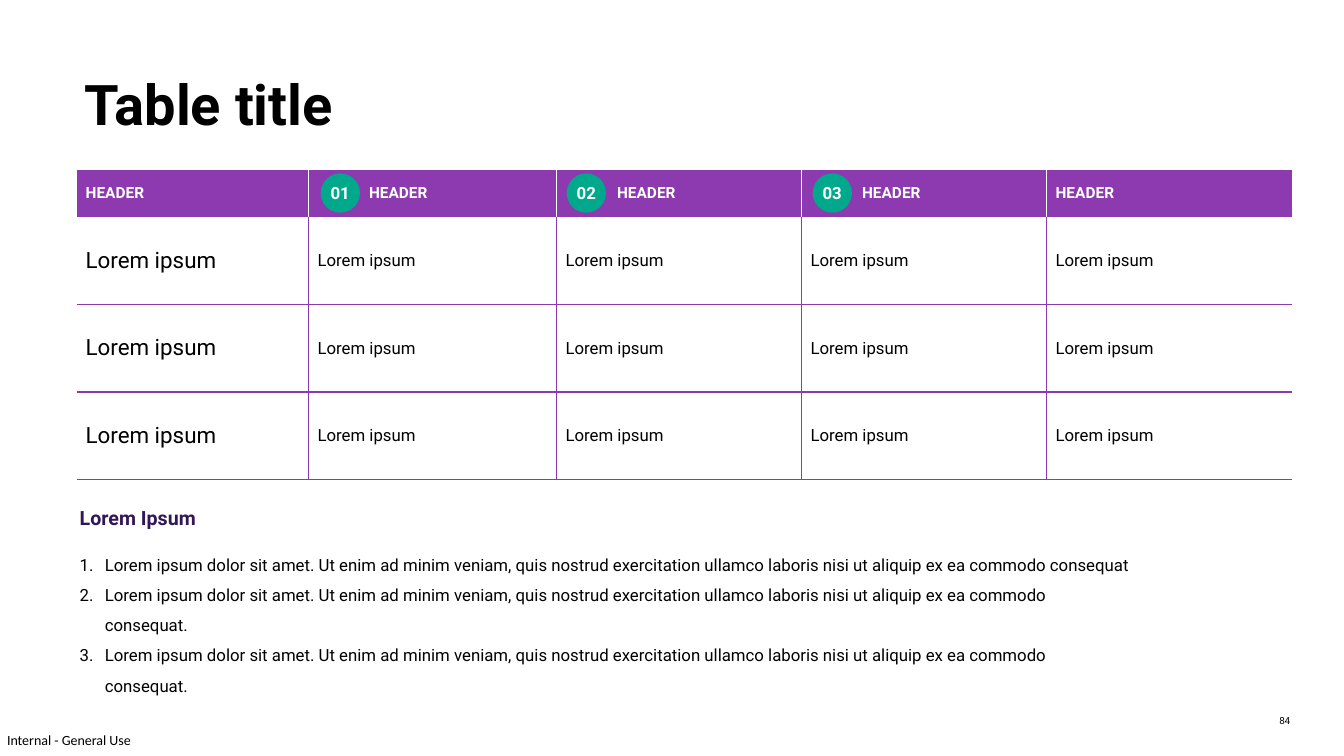
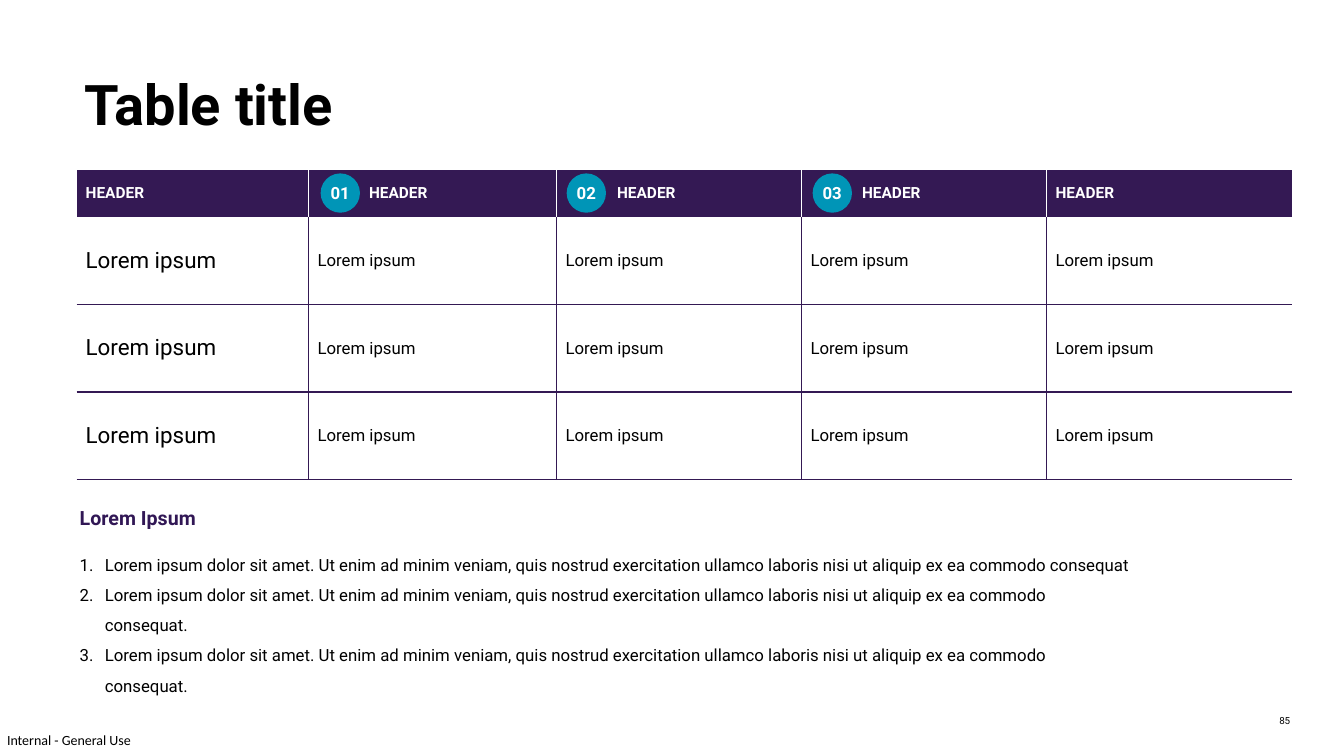
"""Build two table slides that differ only in their accent colours."""
import lxml.etree
import pptx
import pptx.dml.color
import pptx.enum.shapes
import pptx.enum.text
import pptx.oxml.ns
import pptx.util

Inches, Pt = pptx.util.Inches, pptx.util.Pt
RGB = pptx.dml.color.RGBColor.from_string
MIDDLE = pptx.enum.text.MSO_ANCHOR.MIDDLE
TOP = pptx.enum.text.MSO_ANCHOR.TOP
CENTER = pptx.enum.text.PP_ALIGN.CENTER
OVAL = pptx.enum.shapes.MSO_SHAPE.OVAL
qn = pptx.oxml.ns.qn


class Theme:
    black, white, heading = "000000", "FFFFFF", "311755"
    styles = {
        "title": ({"name": "Roboto", "size": Pt(40), "bold": True}, black),
        "header": ({"name": "Roboto", "size": Pt(11), "bold": True}, white),
        "label": ({"name": "Roboto", "size": Pt(16), "bold": False}, black),
        "body": ({"name": "Roboto", "size": Pt(12), "bold": False}, black),
        "badge": ({"name": "Roboto", "size": Pt(12), "bold": True}, white),
        "heading": ({"name": "Roboto", "size": Pt(14), "bold": True}, heading),
        "footer": ({"name": "Calibri", "size": Pt(10), "bold": False}, black),
        "number": ({"name": "Roboto", "size": Pt(7), "bold": False}, black),
    }
    cell_inset = 0.09
    badge_inset = 0.6
    border = Pt(1)


class Deck:
    def __init__(self):
        self.prs = pptx.Presentation()
        self.prs.slide_width, self.prs.slide_height = Inches(13.33), Inches(7.5)
        self.s = None

    def slide(self, number):
        self.s = self.prs.slides.add_slide(self.prs.slide_layouts[6])
        self.text("Internal - General Use", "footer", (0.07, 7.26, 1.27, 0.17), 0, 0)
        self.text(str(number), "number", (12.59, 7.04, 0.44, 0.25), 0.1, 0.05)

    def add_styled_run(self, p, text, style):
        r = p.add_run()
        r.text = text
        values, color = Theme.styles[style]
        for name, value in values.items():
            setattr(r.font, name, value)
        r.font.color.rgb = RGB(color)

    def frame(self, tf, inset_x, inset_y, anchor):
        values = {
            "margin_left": Inches(inset_x), "margin_right": Inches(inset_x),
            "margin_top": Inches(inset_y), "margin_bottom": Inches(inset_y),
            "vertical_anchor": anchor, "word_wrap": True,
        }
        for name, value in values.items():
            setattr(tf, name, value)

    def text(self, text, style, at, inset_x=0.05, inset_y=0.05, anchor=TOP, spacing=1.0):
        tf = self.s.shapes.add_textbox(*map(Inches, at)).text_frame
        self.frame(tf, inset_x, inset_y, anchor)
        p = tf.paragraphs[0]
        p.line_spacing = spacing
        self.add_styled_run(p, text, style)

    def title(self, text):
        self.text(text, "title", (0.74, 0.34, 11.86, 1.45), 0.1, 0.05, MIDDLE, 0.9)

    def numbered(self, items, at):
        tf = self.s.shapes.add_textbox(*map(Inches, at)).text_frame
        self.frame(tf, 0.05, 0.05, TOP)
        for i, item in enumerate(items):
            p = tf.add_paragraph() if i else tf.paragraphs[0]
            p.line_spacing = 1.5
            pPr = p._p.get_or_add_pPr()
            pPr.set("marL", str(Inches(0.25)))
            pPr.set("indent", str(-Inches(0.25)))
            lxml.etree.SubElement(pPr, qn("a:buFont"), typeface="+mj-lt")
            lxml.etree.SubElement(pPr, qn("a:buAutoNum"), type="arabicPeriod")
            self.add_styled_run(p, item, "body")

    def badge(self, text, left, color):
        sp = self.s.shapes.add_shape(OVAL, *map(Inches, (left, 1.72, 0.39, 0.39)))
        sp.shadow.inherit = False
        sp.fill.solid()
        sp.fill.fore_color.rgb = RGB(color)
        sp.line.fill.background()
        self.frame(sp.text_frame, 0, 0, MIDDLE)
        p = sp.text_frame.paragraphs[0]
        p.alignment = CENTER
        self.add_styled_run(p, text, "badge")

    def borders(self, cell, colors):
        tcPr = cell._tc.get_or_add_tcPr()
        for side in "LRTB":
            ln = lxml.etree.SubElement(tcPr, qn(f"a:ln{side}"), w=str(Theme.border))
            if side in colors:
                fill = lxml.etree.SubElement(ln, qn("a:solidFill"))
                lxml.etree.SubElement(fill, qn("a:srgbClr"), val=colors[side])
            else:
                lxml.etree.SubElement(ln, qn("a:noFill"))

    def table(self, rows, widths, heights, at, color, badge_columns):
        shape = self.s.shapes.add_table(len(rows), len(widths), *map(Inches, at))
        tbl = shape.table
        tbl.first_row = tbl.horz_banding = False
        for column, width in zip(tbl.columns, widths):
            column.width = Inches(width)
        for row, height in zip(tbl.rows, heights):
            row.height = Inches(height)
        last = len(widths) - 1
        for i, row in enumerate(rows):
            for j, text in enumerate(row):
                cell = tbl.cell(i, j)
                line = color if i else Theme.white
                colors = {}
                if j > 0:
                    colors["L"] = line
                if j < last:
                    colors["R"] = line
                if i > 1:
                    colors["T"] = line
                if i > 0:
                    colors["B"] = line
                self.borders(cell, colors)
                for side in ("left", "right", "top", "bottom"):
                    setattr(cell, f"margin_{side}", Inches(Theme.cell_inset))
                cell.vertical_anchor = MIDDLE
                if i:
                    cell.fill.background()
                    style = "body" if j else "label"
                else:
                    cell.fill.solid()
                    cell.fill.fore_color.rgb = RGB(color)
                    style = "header"
                    if j in badge_columns:
                        cell.margin_left = Inches(Theme.badge_inset)
                self.add_styled_run(cell.text_frame.paragraphs[0], text, style)


def main():
    sentence = ("Lorem ipsum dolor sit amet. Ut enim ad minim veniam, quis nostrud "
                "exercitation ullamco laboris nisi ut aliquip ex ea commodo consequat")
    rows = [["HEADER"] * 5] + [["Lorem ipsum"] * 5] * 3
    widths = [2.3, 2.46] + [2.43] * 3
    heights = [0.46] + [0.87] * 3
    badge_columns = (1, 2, 3)
    deck = Deck()
    for number, color, badge_color in ((84, "8D39B0", "00A98B"), (85, "341954", "0095B7")):
        deck.slide(number)
        deck.title("Table title")
        deck.table(rows, widths, heights, (0.76, 1.69, 12.04, 3.06), color, badge_columns)
        for n in badge_columns:
            deck.badge(f"{n:02}", 3.18 + 2.44 * (n - 1), badge_color)
        deck.text("Lorem Ipsum", "heading", (0.74, 4.97, 2.19, 0.34))
        deck.numbered([sentence, sentence + ".", sentence + "."], (0.74, 5.35, 10.56, 1.29))
    deck.prs.save("out.pptx")


if __name__ == "__main__":
    main()
